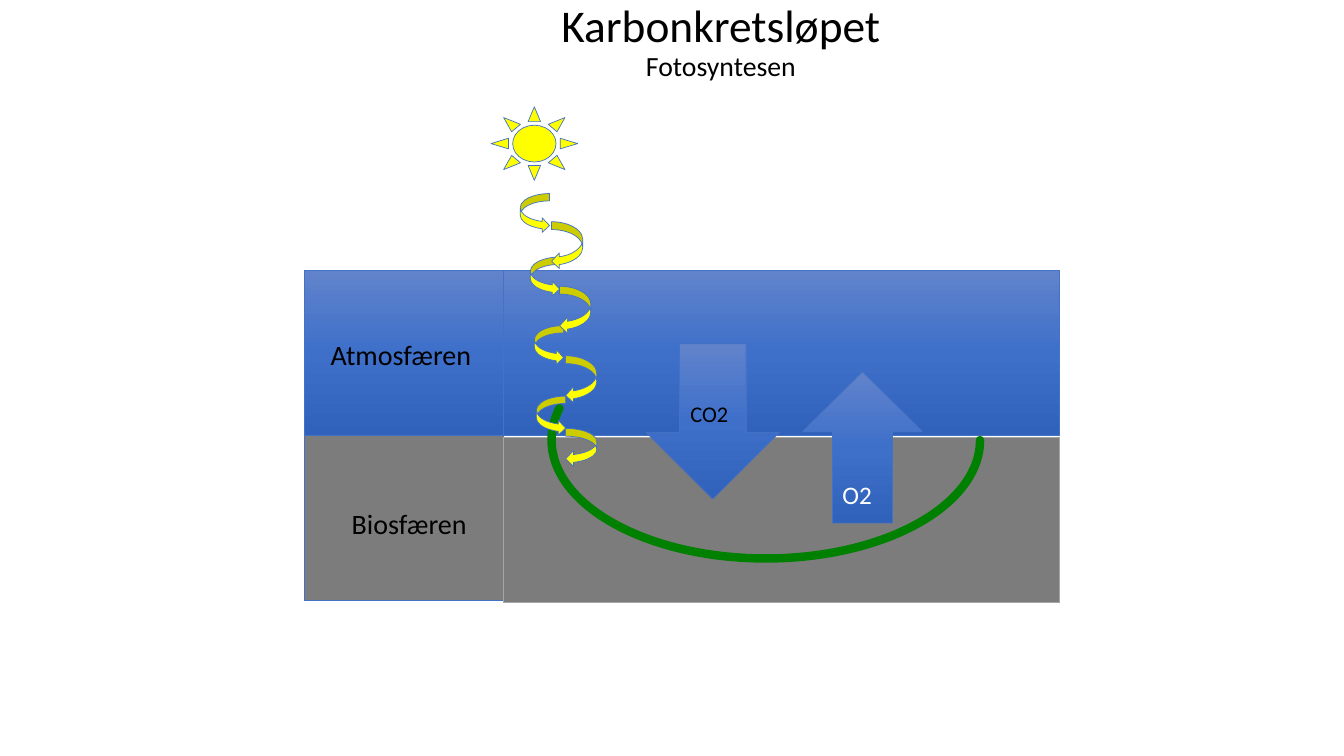
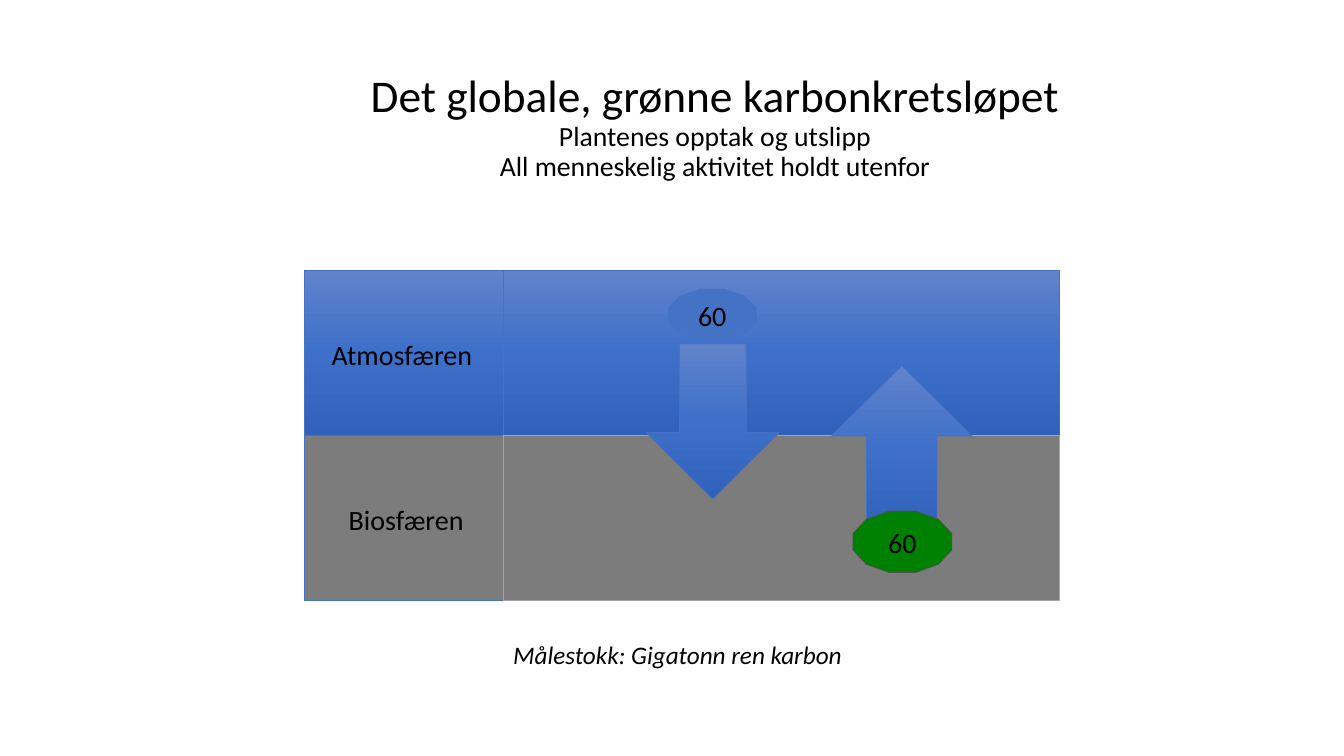
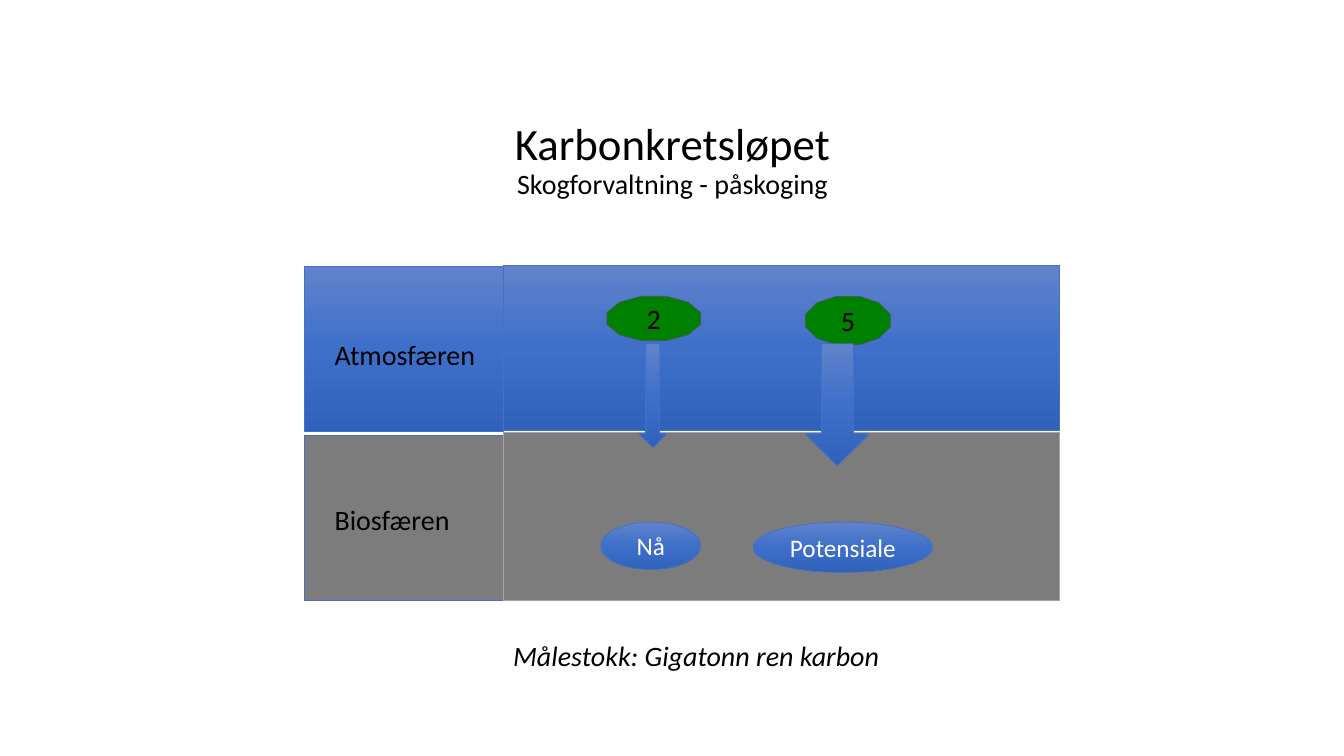
from copy import deepcopy
from dataclasses import dataclass

from pptx import Presentation
from pptx.dml.color import RGBColor
from pptx.enum import shapes, text
from pptx.oxml import ns
from pptx.util import Inches, Pt

KIND = shapes.MSO_SHAPE


@dataclass(frozen=True)
class Theme:
    font: str = "Calibri"
    black: str = "000000"
    white: str = "FFFFFF"
    blue: str = "4472C4"
    gray: str = "7C7C7C"
    pale_edge: str = "A5A5A5"
    dark_edge: str = "525252"
    green: str = "008000"
    yellow: str = "FFFF00"
    sky: tuple = ("6183CB", "3E70CA", "3062BB")
    hairline: float = 0.5
    arc_line: float = 6
    heading: float = 32.4
    subheading: float = 19.8
    label: float = 20
    small: float = 18
    gas: float = 16


THEME = Theme()


@dataclass(frozen=True)
class Box:
    left: float
    top: float
    width: float
    height: float

    def inside(self, left, top, width, height):
        return Box(self.left + left, self.top + top, width, height)

    def lengths(self):
        return [Inches(round(side, 2))
                for side in (self.left, self.top, self.width, self.height)]


DIAGRAM = Box(3.02, 2.68, 7.49, 3.28)
LABEL_WIDTH = 1.97
BAND_HEIGHT = 1.64


def write(para, words, size, color, italic=False):
    span = para.add_run()
    span.text = words
    span.font.name = THEME.font
    span.font.size = Pt(size)
    span.font.italic = italic
    span.font.color.rgb = RGBColor.from_string(color)


def fill_sky(shape):
    shape.fill.gradient()
    shape.fill.gradient_angle = 270
    stops = shape._element.spPr.find(ns.qn("a:gradFill")).find(ns.qn("a:gsLst"))
    stops.insert(1, deepcopy(stops[0]))
    for index, stop in enumerate(shape.fill.gradient_stops):
        stop.position = index / 2
        stop.color.rgb = RGBColor.from_string(THEME.sky[index])


def draw(page, kind, box, fill=THEME.sky, edge=THEME.blue, weight=THEME.hairline):
    shape = page.shapes.add_shape(kind, *box.lengths())
    shape.shadow.inherit = False
    if fill == THEME.sky:
        fill_sky(shape)
    else:
        shape.fill.solid()
        shape.fill.fore_color.rgb = RGBColor.from_string(fill)
    shape.line.color.rgb = RGBColor.from_string(edge)
    shape.line.width = Pt(weight)
    return shape


def caption(shape, words, size, color=THEME.black):
    frame = shape.text_frame
    frame.vertical_anchor = text.MSO_ANCHOR.MIDDLE
    frame.margin_left = frame.margin_right = 0
    para = frame.paragraphs[0]
    para.alignment = text.PP_ALIGN.CENTER
    write(para, words, size, color)


def label(page, box, words, size=THEME.label, italic=False):
    frame = page.shapes.add_textbox(*box.lengths()).text_frame
    frame.word_wrap = True
    write(frame.paragraphs[0], words, size, THEME.black, italic)


def title(page, box, lines, sizes=(THEME.heading, THEME.subheading)):
    holder = page.shapes.title
    holder.left, holder.top, holder.width, holder.height = box.lengths()
    frame = holder.text_frame
    frame.word_wrap = True
    frame.auto_size = text.MSO_AUTO_SIZE.NONE
    frame.vertical_anchor = text.MSO_ANCHOR.BOTTOM
    for index, words in enumerate(lines):
        para = frame.add_paragraph() if index else frame.paragraphs[0]
        para.alignment = text.PP_ALIGN.CENTER
        para.line_spacing = 0.9
        para.space_before = Pt(0)
        write(para, words, sizes[min(index, 1)], THEME.black)


def new_page(deck):
    page = deck.slides.add_slide(deck.slide_layouts[0])
    subtitle = page.placeholders[1]._element
    subtitle.getparent().remove(subtitle)
    return page


def bands(page, box, air_label, ground_label, air_tops=(0, 0), ground_top=BAND_HEIGHT,
          ground_height=BAND_HEIGHT):
    wide = box.width - LABEL_WIDTH
    draw(page, KIND.RECTANGLE, box.inside(0, air_tops[0], LABEL_WIDTH, BAND_HEIGHT))
    draw(page, KIND.RECTANGLE, box.inside(0, BAND_HEIGHT, LABEL_WIDTH, BAND_HEIGHT), THEME.gray)
    draw(page, KIND.RECTANGLE, box.inside(LABEL_WIDTH, air_tops[1], wide, BAND_HEIGHT))
    draw(page, KIND.RECTANGLE, box.inside(LABEL_WIDTH, ground_top, wide, ground_height),
         THEME.gray, THEME.pale_edge)
    for words, (left, top) in (("Atmosfæren", air_label), ("Biosfæren", ground_label)):
        label(page, box.inside(left, top, 1.7, 0.44), words)


def amount(page, box, words, fill=THEME.green, edge=THEME.dark_edge):
    caption(draw(page, KIND.DODECAGON, box, fill, edge), words, THEME.label)


def scale_note(page, box, size):
    label(page, box.inside(LABEL_WIDTH, 3.61, 6.8, 0.44), "Målestokk: Gigatonn ren karbon",
          size, True)


def sunlight(page, box):
    draw(page, KIND.SUN, box.inside(0, 0, 0.86, 0.73), THEME.yellow)
    for left, top in ((0.43, 2.17), (0.39, 1.49), (0.29, 0.86), (0.45, 2.87)):
        draw(page, KIND.CURVED_RIGHT_ARROW, box.inside(left, top, 0.29, 0.39), THEME.yellow)
    for left, top, height in ((0.6, 1.14, 0.47), (0.68, 1.78, 0.47),
                              (0.74, 2.47, 0.47), (0.74, 3.19, 0.38)):
        draw(page, KIND.CURVED_LEFT_ARROW, box.inside(left, top, 0.31, height), THEME.yellow)


def photosynthesis(deck, box):
    page = new_page(deck)
    title(page, Box(2.9, 0, 8.5, 0.87), ("Karbonkretsløpet", "Fotosyntesen"))
    bands(page, box, (0.16, 0.62), (0.37, 2.3), ground_top=1.66)
    draw(page, KIND.DOWN_ARROW, box.inside(3.39, 0.73, 1.32, 1.54))
    oxygen = draw(page, KIND.UP_ARROW, box.inside(4.94, 1.01, 1.19, 1.5))
    frame = oxygen.text_frame
    frame.vertical_anchor = text.MSO_ANCHOR.BOTTOM
    frame.margin_bottom = Inches(0.13)
    frame.paragraphs[0].alignment = text.PP_ALIGN.LEFT
    write(frame.paragraphs[0], "O2", THEME.small, THEME.white)
    arc = draw(page, KIND.BLOCK_ARC, box.inside(2.45, 0.51, 4.25, 2.35),
               THEME.green, THEME.green, THEME.arc_line)
    arc.rotation = 180
    for index, value in enumerate((108, 5.23, 0)):
        arc.adjustments[index] = value
    sunlight(page, Box(4.87, 1.06, 1.05, 3.57))
    label(page, box.inside(3.73, 1.24, 0.7, 0.37), "CO2", THEME.gas)


def global_cycle(deck, box):
    page = new_page(deck)
    title(page, Box(2.84, 0.59, 8.5, 1.27),
          ("Det globale, grønne karbonkretsløpet", "Plantenes opptak og utslipp",
           "All menneskelig aktivitet holdt utenfor"))
    bands(page, box, (0.17, 0.62), (0.34, 2.26))
    draw(page, KIND.DOWN_ARROW, box.inside(3.39, 0.73, 1.32, 1.54))
    draw(page, KIND.UP_ARROW, box.inside(5.23, 0.95, 1.39, 1.64))
    amount(page, box.inside(3.61, 0.19, 0.87, 0.51), "60", THEME.blue, THEME.blue)
    amount(page, box.inside(5.44, 2.39, 0.98, 0.61), "60")
    scale_note(page, box, THEME.small)


def forestry(deck, box):
    page = new_page(deck)
    title(page, Box(2.42, 0.43, 8.5, 1.61),
          ("Karbonkretsløpet", "Skogforvaltning - påskoging"), (32, 20))
    bands(page, box, (0.2, 0.62), (0.2, 2.26), (-0.04, -0.05), 1.61, 1.67)
    amount(page, box.inside(4.97, 0.26, 0.84, 0.48), "5")
    scale_note(page, box, THEME.label)
    draw(page, KIND.DOWN_ARROW, box.inside(3.32, 0.73, 0.27, 1.03))
    draw(page, KIND.DOWN_ARROW, box.inside(4.97, 0.73, 0.63, 1.21))
    amount(page, box.inside(3, 0.26, 0.93, 0.44), "2")
    for words, left, width, height in (("Nå", 2.94, 0.99, 0.47),
                                       ("Potensiale", 4.45, 1.78, 0.5)):
        oval = draw(page, KIND.OVAL, box.inside(left, 2.5, width, height))
        caption(oval, words, THEME.small, THEME.white)


def main():
    deck = Presentation()
    deck.slide_width = Inches(13.33)
    deck.slide_height = Inches(7.5)
    for build in (photosynthesis, global_cycle, forestry):
        build(deck, DIAGRAM)
    deck.save("out.pptx")


if __name__ == "__main__":
    main()
